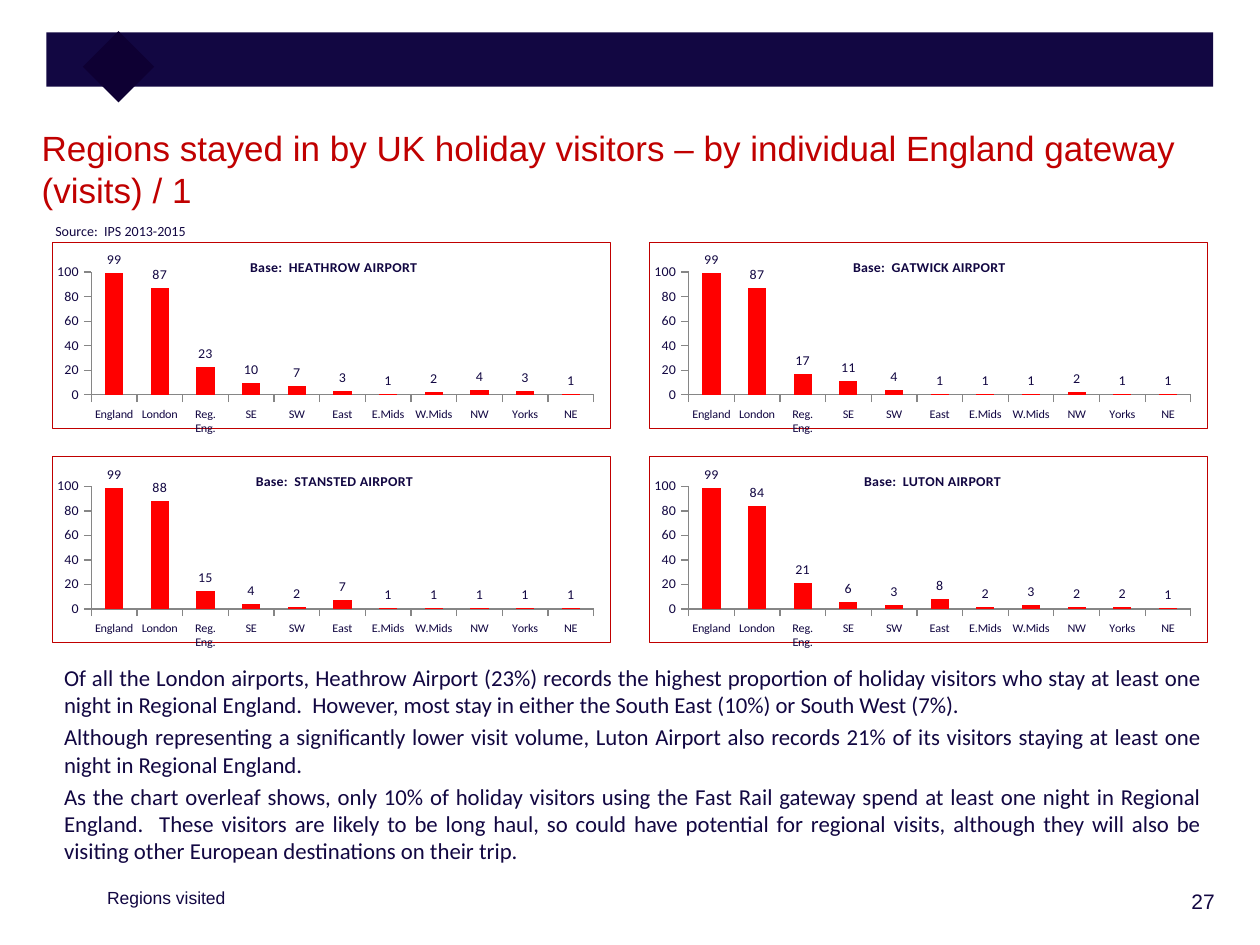
import pptx
import pptx.chart.data
import pptx.dml.color
import pptx.enum.chart
import pptx.enum.shapes
import pptx.enum.text
import pptx.oxml
import pptx.oxml.ns
import pptx.util

Pt = pptx.util.Pt
qn = pptx.oxml.ns.qn
ALIGN = pptx.enum.text.PP_ALIGN

COLOURS = {"navy": "120742", "diamond": "0E0033", "crimson": "C00000",
           "bar": "FF0000", "axis": "868686"}
REGIONS = ["England", "London", "Reg. Eng.", "SE", "SW", "East",
           "E.Mids", "W.Mids", "NW", "Yorks", "NE"]
AIRPORTS = [
    ("HEATHROW", 0.35, [99, 87, 23, 10, 7, 3, 1, 2, 4, 3, 1]),
    ("GATWICK", 0.36, [99, 87, 17, 11, 4, 1, 1, 1, 2, 1, 1]),
    ("STANSTED", 0.36, [99, 88, 15, 4, 2, 7, 1, 1, 1, 1, 1]),
    ("LUTON", 0.38, [99, 84, 21, 6, 3, 8, 2, 3, 2, 2, 1]),
]
COMMENTARY = [
    "Of all the London airports, Heathrow Airport (23%) records the highest proportion of "
    "holiday visitors who stay at least one night in Regional England.  However, most stay "
    "in either the South East (10%) or South West (7%).",
    "Although representing a significantly lower visit volume, Luton Airport also records "
    "21% of its visitors staying at least one night in Regional England.",
    "As the chart overleaf shows, only 10% of holiday visitors using the Fast Rail gateway "
    "spend at least one night in Regional England.  These visitors are likely to be long "
    "haul, so could have potential for regional visits, although they will also be visiting "
    "other European destinations on their trip.",
]
C_NS = pptx.oxml.ns.nsdecls("c")
CA_NS = pptx.oxml.ns.nsdecls("c", "a")


def colour(name):
    return pptx.dml.color.RGBColor.from_string(COLOURS[name])


def style_font(font, size, name, ink="navy", bold=False):
    font.size = Pt(size)
    font.name = name
    font.bold = bold
    font.color.rgb = colour(ink)


def place(shape, box):
    shape.left, shape.top, shape.width, shape.height = map(Pt, box)


def fill_text(shape, paragraphs, size, font, ink="navy", align=ALIGN.LEFT):
    frame = shape.text_frame
    frame.word_wrap = True
    frame.auto_size = pptx.enum.text.MSO_AUTO_SIZE.NONE
    frame.vertical_anchor = pptx.enum.text.MSO_ANCHOR.TOP
    for index, words in enumerate(paragraphs):
        paragraph = frame.add_paragraph() if index else frame.paragraphs[0]
        paragraph.alignment = align
        paragraph.space_before = Pt(size * 0.2 if index else 0)
        run = paragraph.add_run()
        run.text = words
        style_font(run.font, size, font, ink)


def add_text(slide, box, *text, **options):
    fill_text(slide.shapes.add_textbox(*map(Pt, box)), *text, **options)


def add_block(slide, box, ink):
    block = slide.shapes.add_shape(pptx.enum.shapes.MSO_SHAPE.RECTANGLE, *map(Pt, box))
    block.shadow.inherit = False
    block.fill.solid()
    block.fill.fore_color.rgb = colour(ink)
    block.line.fill.background()
    return block


def add_banner(slide, box):
    left, top, width, height = box
    add_block(slide, box, "navy")
    side = 28.8
    diamond = add_block(slide, (left + 26.7, top + 5.2, side, side), "diamond")
    diamond.rotation = 45


def add_heading(slide, box):
    title = slide.shapes.title
    place(title, box)
    fill_text(title, ["Regions stayed in by UK holiday visitors – by individual England "
                      "gateway (visits) / 1"], 20, "Arial", ink="crimson")


def add_footer(slide, box):
    left, top, width, height = box
    section = slide.placeholders[1]
    place(section, (left, top, 192, height))
    fill_text(section, ["Regions visited"], 10, "Arial")
    properties = section.text_frame.paragraphs[0]._p.get_or_add_pPr()
    properties.set("marL", "0")
    properties.set("indent", "0")
    properties.append(pptx.oxml.parse_xml(f'<a:buNone {pptx.oxml.ns.nsdecls("a")}/>'))
    add_text(slide, (left + width - 87, top + 0.7, 87, 26), ["27"], 12, "Arial",
             align=ALIGN.RIGHT)


def manual_layout(x, y, size=None):
    target = '<c:layoutTarget val="inner"/>' if size else ""
    extent = f'<c:w val="{size[0]}"/><c:h val="{size[1]}"/>' if size else ""
    return pptx.oxml.parse_xml(
        f'<c:layout {C_NS}><c:manualLayout>{target}<c:xMode val="edge"/>'
        f'<c:yMode val="edge"/><c:x val="{x}"/><c:y val="{y}"/>{extent}'
        '</c:manualLayout></c:layout>')


def drop_layout(element):
    for layout in element.findall(qn("c:layout")):
        element.remove(layout)


def add_airport_chart(slide, box, airport, title_x, visits):
    data = pptx.chart.data.CategoryChartData(number_format="0")
    data.categories = REGIONS
    data.add_series("Series 1", visits)
    chart = slide.shapes.add_chart(pptx.enum.chart.XL_CHART_TYPE.COLUMN_CLUSTERED,
                                   *map(Pt, box), data).chart
    style_font(chart.font, 12, "Calibri")
    chart.has_legend = False

    chart.has_title = True
    base = chart.chart_title.text_frame.paragraphs[0].add_run()
    base.text = f"Base:  {airport} AIRPORT"
    style_font(base.font, 8, "Calibri", bold=True)
    heading = chart.chart_title._element
    drop_layout(heading)
    heading.find(qn("c:tx")).addnext(manual_layout(title_x, 0.07))

    for axis, size in ((chart.category_axis, 7), (chart.value_axis, 8)):
        axis.has_major_gridlines = False
        axis.major_tick_mark = pptx.enum.chart.XL_TICK_MARK.OUTSIDE
        axis.minor_tick_mark = pptx.enum.chart.XL_TICK_MARK.NONE
        axis.format.line.color.rgb = colour("axis")
        axis.format.line.width = Pt(0.75)
        style_font(axis.tick_labels.font, size, "Calibri")
    chart.value_axis.minimum_scale = 0
    chart.value_axis.maximum_scale = 100
    chart.value_axis.major_unit = 20

    plot = chart.plots[0]
    plot.gap_width = 150
    plot.vary_by_categories = False
    bars = plot.series[0].format.fill
    bars.solid()
    bars.fore_color.rgb = colour("bar")
    plot.has_data_labels = True
    labels = plot.data_labels
    labels.show_value = True
    labels.number_format = "0"
    labels.number_format_is_linked = False
    labels.position = pptx.enum.chart.XL_LABEL_POSITION.OUTSIDE_END
    style_font(labels.font, 8, "Calibri")

    space = chart._chartSpace
    area = space.chart.plotArea
    drop_layout(area)
    area.insert(0, manual_layout(0.07, 0.16, (0.9, 0.66)))
    space.chart.addnext(pptx.oxml.parse_xml(
        f'<c:spPr {CA_NS}><a:noFill/><a:ln w="{Pt(0.75)}"><a:solidFill>'
        f'<a:srgbClr val="{COLOURS["crimson"]}"/></a:solidFill></a:ln></c:spPr>'))


def add_chart_grid(slide, box):
    left, top, width, height = box
    chart_width, chart_height = 319.7, 110.2
    for index, airport in enumerate(AIRPORTS):
        row, column = divmod(index, 2)
        add_airport_chart(slide, (left + column * (width - chart_width),
                                  top + row * (height - chart_height),
                                  chart_width, chart_height), *airport)


def main():
    deck = pptx.Presentation()
    deck.slide_width, deck.slide_height = Pt(720), Pt(540)
    slide = deck.slides.add_slide(deck.slide_layouts[1])
    add_banner(slide, (26.6, 18.6, 666.7, 31))
    add_heading(slide, (16.6, 68.4, 703.4, 44))
    add_text(slide, (24.5, 123.8, 145.4, 13), ["Source:  IPS 2013-2015"], 8, "Calibri")
    add_chart_grid(slide, (29.5, 138.2, 661, 232.6))
    add_text(slide, (29.5, 375.8, 663.1, 146.2), COMMENTARY, 13, "Calibri",
             align=ALIGN.JUSTIFY)
    add_footer(slide, (54, 503.3, 647.3, 21.6))
    deck.save("out.pptx")


if __name__ == "__main__":
    main()
